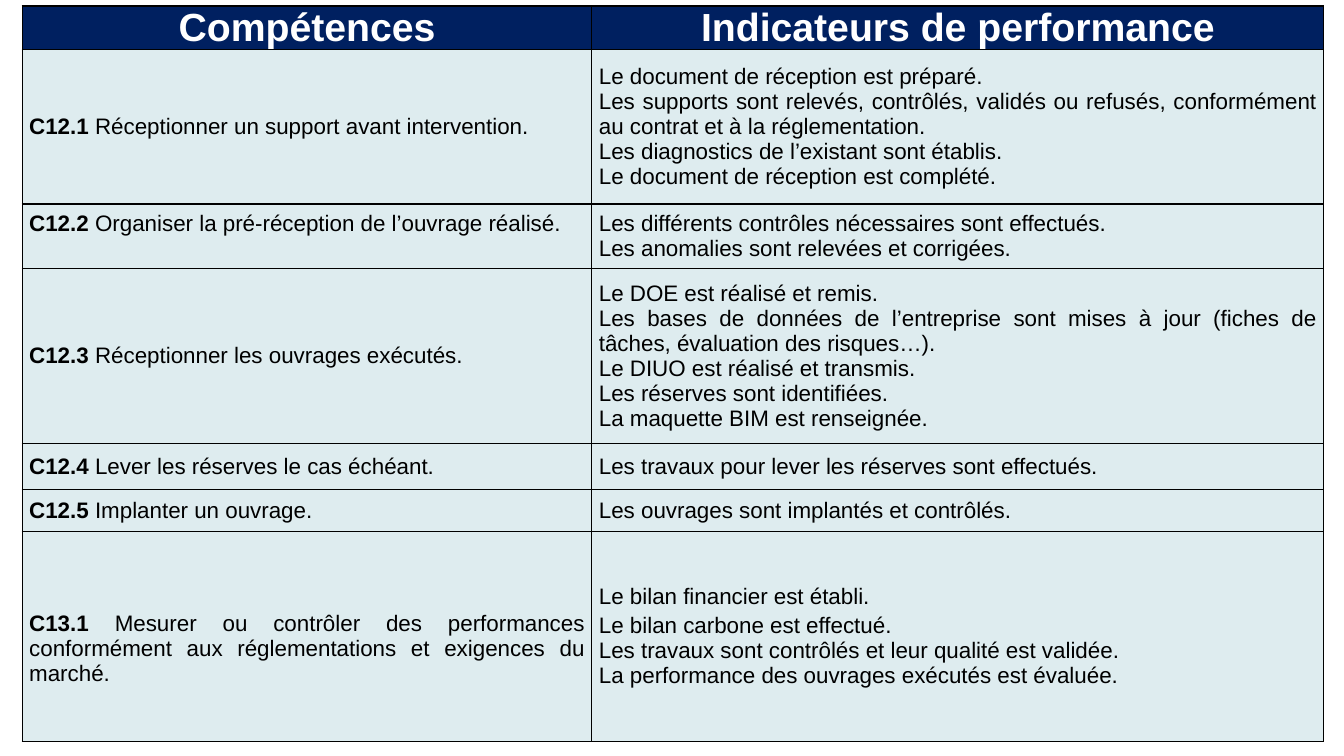
from pptx import Presentation
from pptx.dml.color import RGBColor as Rgb
from pptx.enum.text import MSO_ANCHOR as Anchor, PP_ALIGN as Align
from pptx.oxml import parse_xml
from pptx.oxml.ns import nsdecls
from pptx.util import Inches, Pt

NAVY, PALE, BLACK, WHITE = "002060", "DEECEF", "000000", "FFFFFF"
HEADS = ["Compétences", "Indicateurs de performance"]
SKILLS = [
    ("C12.1 ", "Réceptionner un support avant intervention.", [
        "Le document de réception est préparé.",
        "Les supports sont relevés, contrôlés, validés ou refusés, "
        "conformément au contrat et à la réglementation.",
        "Les diagnostics de l’existant sont établis.",
        "Le document de réception est complété."]),
    ("C12.2 ", "Organiser la pré-réception de l’ouvrage réalisé.", [
        "Les différents contrôles nécessaires sont effectués.",
        "Les anomalies sont relevées et corrigées."]),
    ("C12.3 ", "Réceptionner les ouvrages exécutés.", [
        "Le DOE est réalisé et remis.",
        "Les bases de données de l’entreprise sont mises à jour "
        "(fiches de tâches, évaluation des risques…).",
        "Le DIUO est réalisé et transmis.",
        "Les réserves sont identifiées.",
        "La maquette BIM est renseignée."]),
    ("C12.4 ", "Lever les réserves le cas échéant.", [
        "Les travaux pour lever les réserves sont effectués."]),
    ("C12.5 ", "Implanter un ouvrage.", [
        "Les ouvrages sont implantés et contrôlés."]),
    ("C13.1 ", "Mesurer ou contrôler des performances conformément aux "
     "réglementations et exigences du marché.", [
         "Le bilan financier est établi.",
         "Le bilan carbone est effectué.",
         "Les travaux sont contrôlés et leur qualité est validée.",
         "La performance des ouvrages exécutés est évaluée."]),
]
WIDTHS = [5.65, 7.26]
HEIGHTS = [0.43, 1.53, 0.64, 1.74, 0.45, 0.42, 2.08]
LEFT, TOP = 0.22, 0.06
PADS = {"C12.2 ": (0, 0.25), "C13.1 ": (0.25, 0)}
GAPS = {"Le bilan carbone est effectué.": 3}


def color(code):
    return Rgb.from_string(code)


def frame(cell, fill, pads=(0, 0)):
    props = cell._tc.get_or_add_tcPr()
    for side in "LRTB":
        props.append(parse_xml(
            f'<a:ln{side} w="12700" {nsdecls("a")}><a:solidFill>'
            f'<a:srgbClr val="{BLACK}"/></a:solidFill></a:ln{side}>'))
    cell.fill.solid()
    cell.fill.fore_color.rgb = color(fill)
    cell.vertical_anchor = Anchor.MIDDLE
    cell.margin_left = cell.margin_right = Inches(0.07)
    cell.margin_top, cell.margin_bottom = map(Inches, pads)


def write(cell, lines, size, ink, align, bold=False):
    """Fill a cell with lines, each a list of (text, bold) runs."""
    body = cell.text_frame
    for i, runs in enumerate(lines):
        para = body.add_paragraph() if i else body.paragraphs[0]
        para.alignment = align
        if runs[0][0] in GAPS:
            para.space_before = Pt(GAPS[runs[0][0]])
        font = para.font
        font.name, font.size, font.bold = "Arial", Pt(size), bold
        font.color.rgb = color(ink)
        for text, strong in runs:
            run = para.add_run()
            run.text = text
            if strong != bold:
                run.font.bold = strong


def main():
    deck = Presentation()
    deck.slide_width, deck.slide_height = Inches(13.33), Inches(7.5)
    slide = deck.slides.add_slide(deck.slide_layouts[6])
    table = slide.shapes.add_table(
        len(HEIGHTS), len(WIDTHS), Inches(LEFT), Inches(TOP),
        Inches(sum(WIDTHS)), Inches(sum(HEIGHTS))).table
    table.first_row = table.horz_banding = False
    for col, width in zip(table.columns, WIDTHS):
        col.width = Inches(width)
    for row, height in zip(table.rows, HEIGHTS):
        row.height = Inches(height)

    for c, head in enumerate(HEADS):
        cell = table.cell(0, c)
        frame(cell, NAVY)
        write(cell, [[(head, True)]], 28, WHITE, Align.CENTER, True)
    for r, (code, skill, signs) in enumerate(SKILLS, 1):
        left, right = table.cell(r, 0), table.cell(r, 1)
        frame(left, PALE, PADS.get(code, (0, 0)))
        frame(right, PALE)
        write(left, [[(code, True), (skill, False)]], 16, BLACK, Align.JUSTIFY)
        write(right, [[(sign, False)] for sign in signs], 16, BLACK,
              Align.JUSTIFY)
    deck.save("out.pptx")


if __name__ == "__main__":
    main()
